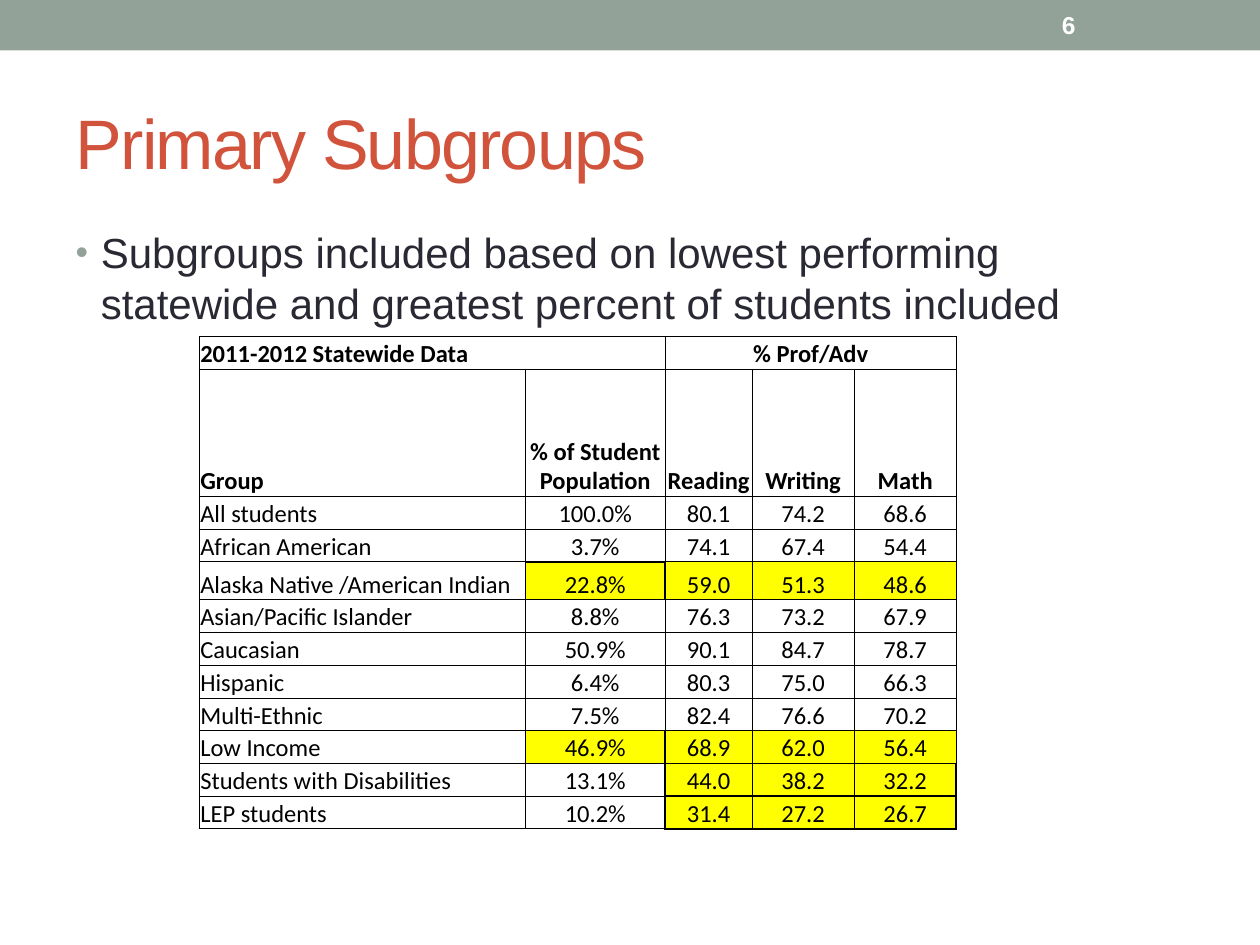
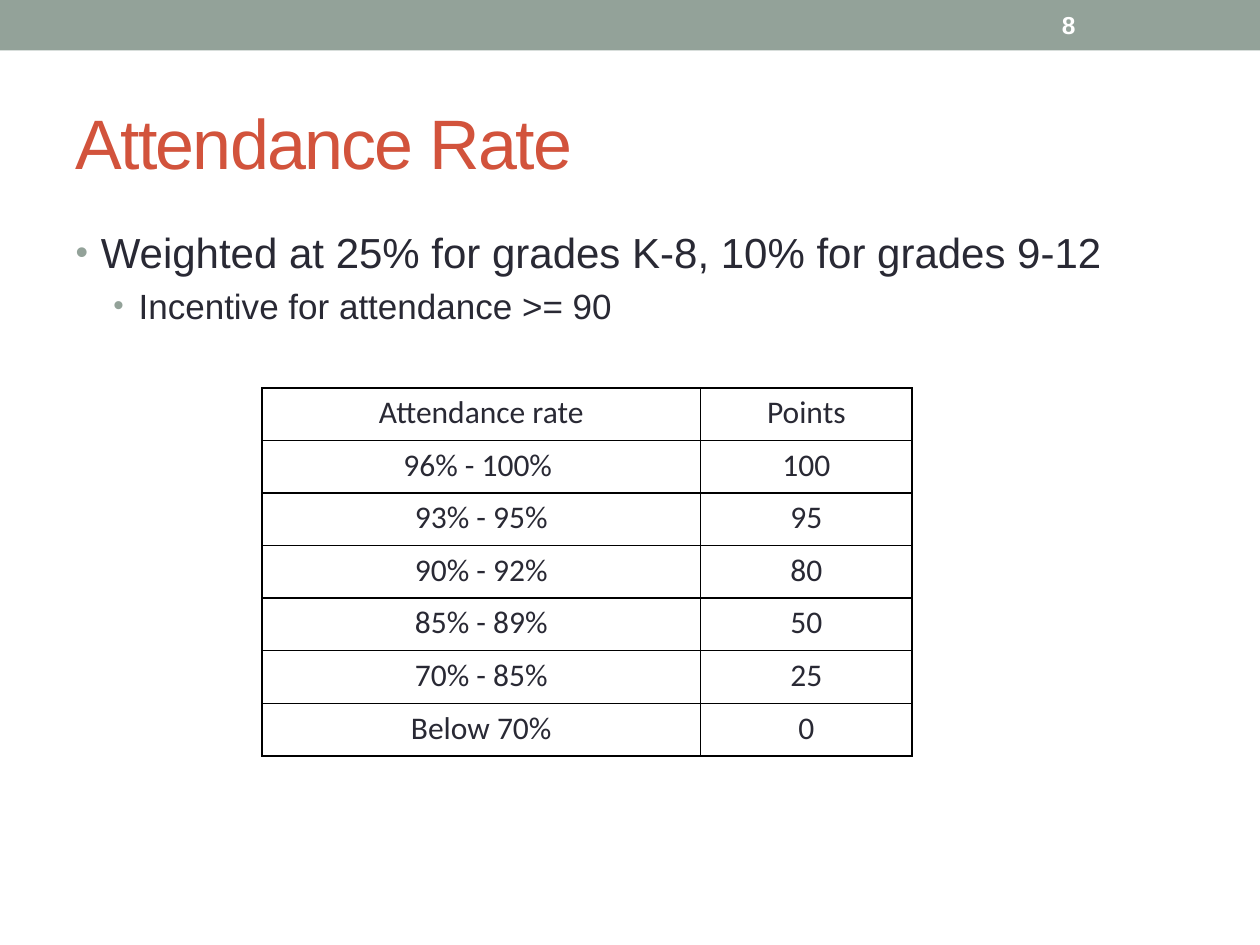
import dataclasses

import lxml.etree
import pptx
import pptx.dml.color
import pptx.enum.shapes
import pptx.enum.text
import pptx.oxml.ns
import pptx.util

Inches, Pt = pptx.util.Inches, pptx.util.Pt
rgb = pptx.dml.color.RGBColor.from_string
qn = pptx.oxml.ns.qn
align, anchor = pptx.enum.text.PP_ALIGN, pptx.enum.text.MSO_ANCHOR


@dataclasses.dataclass(frozen=True)
class Theme:
    sage: str = "93A299"
    rust: str = "D2533C"
    ink: str = "292934"
    black: str = "000000"
    white: str = "FFFFFF"
    mark: str = "FFFF00"
    sans: str = "Arial"
    grid: str = "Calibri"
    title: int = 40
    list: tuple = (24, 20)
    page: int = 14


look = Theme()


def fmt(item, **vals):
    """Set each named attribute of item."""
    for name, val in vals.items():
        setattr(item, name, val)


def write(par, words, size, color, face=look.sans, bold=False, side=align.LEFT):
    """Put one formatted run into a paragraph."""
    run = par.add_run()
    run.text = words
    fmt(run.font, size=Pt(size), name=face, bold=bold)
    run.font.color.rgb = rgb(color)
    par.alignment = side
    return run


# Content of each slide
groups = [
    ["2011-2012 Statewide Data", "", "% Prof/Adv", "", ""],
    ["Group", "% of Student Population", "Reading", "Writing", "Math"],
    ["All students", "100.0%", "80.1", "74.2", "68.6"],
    ["African American", "3.7%", "74.1", "67.4", "54.4"],
    ["Alaska Native /American Indian", "22.8%", "59.0", "51.3", "48.6"],
    ["Asian/Pacific Islander", "8.8%", "76.3", "73.2", "67.9"],
    ["Caucasian", "50.9%", "90.1", "84.7", "78.7"],
    ["Hispanic", "6.4%", "80.3", "75.0", "66.3"],
    ["Multi-Ethnic", "7.5%", "82.4", "76.6", "70.2"],
    ["Low Income", "46.9%", "68.9", "62.0", "56.4"],
    ["Students with Disabilities", "13.1%", "44.0", "38.2", "32.2"],
    ["LEP students", "10.2%", "31.4", "27.2", "26.7"],
]
rates = [
    ["Attendance rate", "Points"],
    ["96% - 100% ", "100"],
    ["93% - 95%", "95"],
    ["90% - 92%", "80"],
    ["85% - 89%", "50"],
    ["70% - 85%", "25"],
    ["Below 70%", "0"],
]
# Row number -> first column that is marked
marks = {4: 1, 9: 1, 10: 2, 11: 2}
# Cells that share a heavy outline
boxes = {(4, 1): "native", (9, 1): "income"}
boxes.update({(row, col): row for row in (10, 11) for col in (2, 3, 4)})

pages = [
    dict(
        title="Primary Subgroups", page="6",
        items=["Subgroups included based on lowest performing statewide "
               "and greatest percent of students included"],
        rows=groups, at=(1.58, 2.67, 6.01, 3.91), cols=(2.59, 1.11, 0.69, 0.81, 0.81),
        tall={0: 0.26, 1: 1.01, 4: 0.3}, even=0.26,
        spans=[(0, 0, 1), (0, 2, 4)], marks=marks, boxes=boxes, line=0.5,
        heads=2, left=True, size=14, color=look.black, par={},
        cell=dict(vertical_anchor=anchor.BOTTOM, margin_left=Inches(0.01),
                  margin_top=Inches(0.01), margin_right=Inches(0.01), margin_bottom=0),
    ),
    dict(
        title="Attendance Rate", page="8",
        items=["Weighted at 25% for grades K-8, 10% for grades 9-12",
               "Incentive for attendance >= 90"],
        rows=rates, at=(2.08, 3.08, 5.16, 2.92), cols=(3.48, 1.68),
        tall={}, even=2.92 / len(rates),
        spans=[], marks={}, boxes={}, line=1,
        heads=0, left=False, size=18, color=look.ink,
        par=dict(line_spacing=1.15, space_after=Pt(10)),
        cell=dict(vertical_anchor=anchor.TOP, margin_left=Inches(0.07),
                  margin_top=0, margin_right=Inches(0.07), margin_bottom=0),
    ),
]
sides = {"a:lnL": (0, -1), "a:lnR": (0, 1), "a:lnT": (-1, 0), "a:lnB": (1, 0)}

deck = pptx.Presentation()
fmt(deck, slide_width=Inches(10), slide_height=Inches(7.5))
base = deck.slide_layouts[1]
slides = [deck.slides.add_slide(base) for _ in pages]

# Shared layout: title and list places, top band
for spot, (top, high) in zip(base.placeholders, [(0.58, 1.08), (1.75, 5.33)]):
    fmt(spot, left=Inches(0.5), top=Inches(top), width=Inches(9), height=Inches(high))
band = slides[0].shapes.add_shape(
    pptx.enum.shapes.MSO_SHAPE.RECTANGLE, 0, 0, Inches(10), Inches(0.4))
band.shadow.inherit = False
band.fill.solid()
band.fill.fore_color.rgb = rgb(look.sage)
band.line.fill.background()
base.shapes._spTree.insert(2, band._element)

for slide, info in zip(slides, pages):
    # Title
    frame = slide.shapes.title.text_frame
    fmt(frame, vertical_anchor=anchor.MIDDLE, word_wrap=True,
        auto_size=pptx.enum.text.MSO_AUTO_SIZE.NONE)
    run = write(frame.paragraphs[0], info["title"], look.title, look.rust)
    run.font._element.set("spc", "-100")

    # List
    frame = slide.placeholders[1].text_frame
    fmt(frame, word_wrap=True, auto_size=pptx.enum.text.MSO_AUTO_SIZE.NONE)
    for level, words in enumerate(info["items"]):
        par = frame.add_paragraph() if level else frame.paragraphs[0]
        par.level = level
        write(par, words, look.list[level], look.ink)
        props = par._p.get_or_add_pPr()
        props.set("marL", str(Inches(0.2 + 0.3 * level)))
        props.set("indent", str(-Inches(0.2)))
        tint = lxml.etree.SubElement(props, qn("a:buClr"))
        lxml.etree.SubElement(tint, qn("a:srgbClr"), val=look.sage)
        lxml.etree.SubElement(props, qn("a:buSzPct"), val="85000")
        lxml.etree.SubElement(props, qn("a:buFont"), typeface=look.sans)
        lxml.etree.SubElement(props, qn("a:buChar"), char="•")

    # Page number
    box = slide.shapes.add_textbox(Inches(8.33), Inches(0.02), Inches(1.17), Inches(0.36))
    fmt(box.text_frame, vertical_anchor=anchor.MIDDLE, word_wrap=True)
    write(box.text_frame.paragraphs[0], info["page"], look.page, look.white, bold=True)

    # Table
    rows, boxes = info["rows"], info["boxes"]
    table = slide.shapes.add_table(
        len(rows), len(rows[0]), *map(Inches, info["at"])).table
    fmt(table, first_row=False, horz_banding=False)
    for col, wide in zip(table.columns, info["cols"]):
        col.width = Inches(wide)
    for num, row in enumerate(table.rows):
        row.height = Inches(info["tall"].get(num, info["even"]))
    for row, first, last in info["spans"]:
        table.cell(row, first).merge(table.cell(row, last))

    for r, row in enumerate(rows):
        for c, words in enumerate(row):
            cell = table.cell(r, c)
            fmt(cell, **info["cell"])
            if c >= info["marks"].get(r, len(row)):
                cell.fill.solid()
                cell.fill.fore_color.rgb = rgb(look.mark)
            else:
                cell.fill.background()
            if words:
                par = cell.text_frame.paragraphs[0]
                fmt(par, **info["par"])
                side = align.LEFT if info["left"] and c == 0 else align.CENTER
                write(par, words, info["size"], info["color"], look.grid,
                      r < info["heads"], side)
            # An edge is heavy where it parts two boxes
            props = cell._tc.get_or_add_tcPr()
            for spot, (tag, (down, over)) in enumerate(sides.items()):
                heavy = boxes.get((r, c)) != boxes.get((r + down, c + over))
                edge = lxml.etree.Element(qn(tag), w=str(Pt(1 if heavy else info["line"])))
                fill = lxml.etree.SubElement(edge, qn("a:solidFill"))
                lxml.etree.SubElement(fill, qn("a:srgbClr"), val=look.black)
                props.insert(spot, edge)

deck.save("out.pptx")
